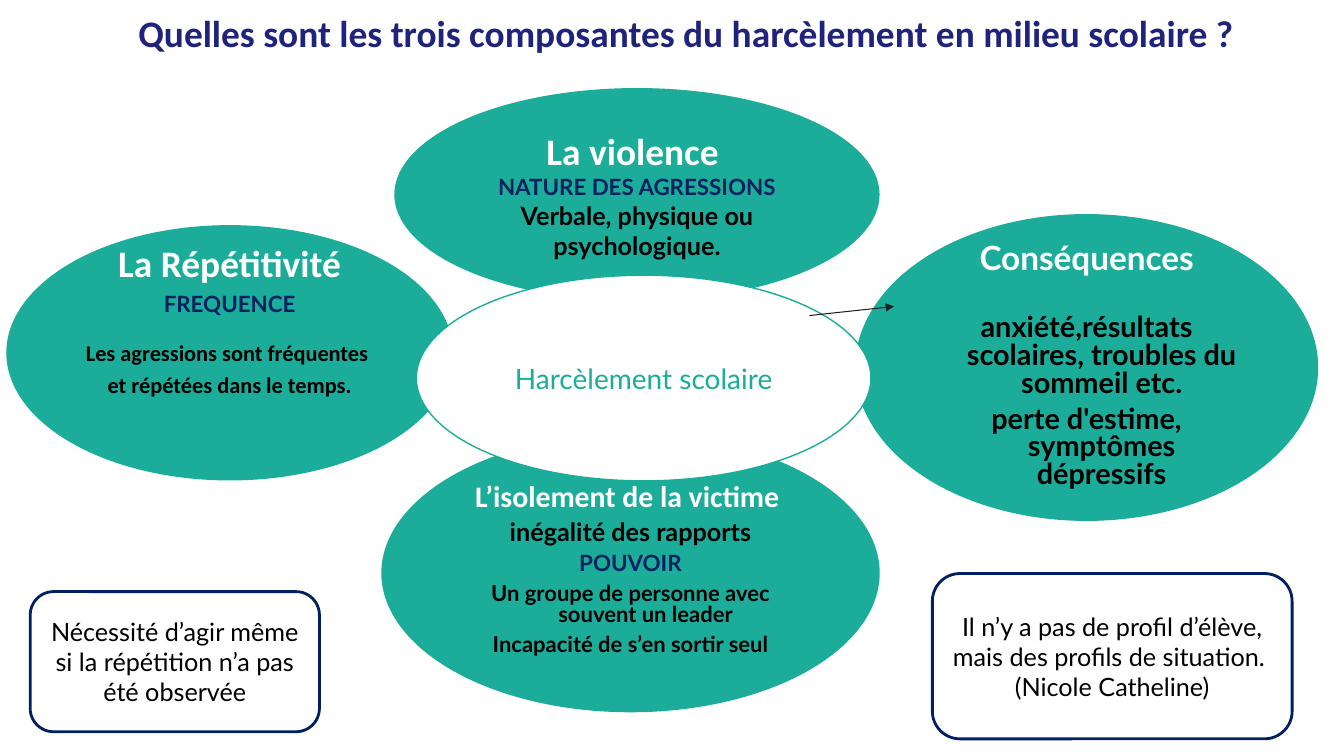
from dataclasses import dataclass

from lxml import etree
from pptx import Presentation
from pptx.dml.color import RGBColor
from pptx.enum.shapes import MSO_CONNECTOR, MSO_SHAPE
from pptx.enum.text import MSO_ANCHOR, MSO_AUTO_SIZE, PP_ALIGN
from pptx.oxml.ns import qn
from pptx.util import Pt

ELLIPSE = MSO_SHAPE.OVAL
ROUNDED = MSO_SHAPE.ROUNDED_RECTANGLE
STRAIGHT = MSO_CONNECTOR.STRAIGHT
MIDDLE = MSO_ANCHOR.MIDDLE
CENTER = PP_ALIGN.CENTER


@dataclass(frozen=True)
class Theme:
    teal: str = "1BAD99"
    navy: str = "002060"
    title: str = "20237B"
    white: str = "FFFFFF"
    black: str = "000000"
    arrow: str = "202020"
    heading_font: str = "Calibri"
    text_font: str = "Lato"
    heading: float = 26.7
    consequence_heading: float = 23.8
    isolation_heading: float = 21.3
    consequence: float = 20.6
    center: float = 20
    text: float = 18
    keyword: float = 16
    detail: float = 15.7


THEME = Theme()
HEAD, TEXT = THEME.heading_font, THEME.text_font

TITLE = "Quelles sont les trois composantes du harcèlement en milieu scolaire ?"
TITLE_BOX = (85.7, -10, 810, 70.6)

# Paragraphs: (text, font, size, colour, bold, hanging indent, space before).
# "lift" is added to the bottom inset and raises the centred text.
BUBBLES = [
    {"box": (282.2, 63.4, 345.6, 151.2), "spacing": 1, "lift": 0, "paragraphs": [
        ("La violence ", HEAD, THEME.heading, THEME.white, True, 0, 0),
        ("NATURE DES AGRESSIONS", TEXT, THEME.keyword, THEME.navy, True, 0, 0),
        ("Verbale, physique ou psychologique.", TEXT, THEME.text, THEME.black, True, 0, 0),
    ]},
    {"box": (5, 161.3, 318.2, 181.4), "spacing": 0.7, "lift": 39.6, "paragraphs": [
        ("La Répétitivité", HEAD, THEME.heading, THEME.white, True, 18, 0),
        ("FREQUENCE", TEXT, THEME.keyword, THEME.navy, True, 18, 10),
        ("Les agressions sont fréquentes ", HEAD, THEME.keyword, THEME.black, True, 18, 21),
        ("et répétées dans le temps.", HEAD, THEME.keyword, THEME.black, True, 18, 10),
    ]},
    {"box": (611.3, 153.4, 329.8, 218.2), "spacing": 0.8, "lift": 0, "paragraphs": [
        ("Conséquences", TEXT, THEME.consequence_heading, THEME.white, True, 21.6, 0),
        ("anxiété,résultats scolaires, troubles du sommeil etc.",
         TEXT, THEME.consequence, THEME.black, True, 21.6, 27.6),
        ("perte d'estime, symptômes dépressifs",
         TEXT, THEME.consequence, THEME.black, True, 21.6, 6),
    ]},
    {"box": (272.9, 310.3, 355, 198), "spacing": 0.8, "lift": 3.3, "paragraphs": [
        ("L’isolement de la victime ",
         HEAD, THEME.isolation_heading, THEME.white, True, 0, 0),
        ("inégalité des rapports", TEXT, THEME.text, THEME.black, True, 21.6, 6),
        ("POUVOIR", TEXT, THEME.keyword, THEME.navy, True, 21.6, 6),
        ("Un groupe de personne avec souvent un leader",
         TEXT, THEME.detail, THEME.black, True, 21.6, 6),
        ("Incapacité de s’en sortir seul", TEXT, THEME.detail, THEME.black, True, 21.6, 6),
    ]},
]
CENTER_BOX = (297.4, 196.6, 324.7, 146.9)
CENTER_TEXT = ["Harcèlement scolaire"]
NOTES = [
    ((666, 409.7, 257, 118.1),
     ["Il n’y a pas de profil d’élève, mais des profils de situation. ",
      "(Nicole Catheline)"]),
    ((21.6, 422.6, 206.6, 100.1),
     ["Nécessité d’agir même si la répétition n’a pas été observée"]),
]
ARROW = (578.2, 225.4, 638.6, 218.9)


def points(values):
    return [Pt(value) for value in values]


def write_text(shape, paragraphs, spacing=1, lift=0):
    frame = shape.text_frame
    frame.word_wrap = True
    frame.auto_size = MSO_AUTO_SIZE.NONE
    frame.vertical_anchor = MIDDLE
    frame.margin_left = frame.margin_right = Pt(7.2)
    frame.margin_top = Pt(3.6)
    frame.margin_bottom = Pt(3.6 + lift)
    for index, (text, font, size, color, bold, indent, before) in enumerate(paragraphs):
        paragraph = frame.add_paragraph() if index else frame.paragraphs[0]
        paragraph.alignment = CENTER
        paragraph.line_spacing = spacing
        paragraph.space_before = Pt(before)
        if indent:
            properties = paragraph._p.get_or_add_pPr()
            properties.set("marL", str(Pt(indent)))
            properties.set("indent", str(Pt(-indent)))
        run = paragraph.add_run()
        run.text = text
        run.font.name = font
        run.font.size = Pt(size)
        run.font.bold = bold
        run.font.color.rgb = RGBColor.from_string(color)


def add_panel(slide, kind, box, fill, line, width):
    shape = slide.shapes.add_shape(kind, *points(box))
    shape.shadow.inherit = False
    shape.fill.solid()
    shape.fill.fore_color.rgb = RGBColor.from_string(fill)
    shape.line.color.rgb = RGBColor.from_string(line)
    shape.line.width = Pt(width)
    return shape


def plain(texts, size, color):
    return [(text, TEXT, size, color, False, 0, 0) for text in texts]


def add_arrow(slide):
    arrow = slide.shapes.add_connector(STRAIGHT, *points(ARROW))
    arrow.line.color.rgb = RGBColor.from_string(THEME.arrow)
    arrow.line.width = Pt(0.75)
    etree.SubElement(arrow.line._get_or_add_ln(), qn("a:tailEnd"), type="triangle")
    etree.SubElement(arrow._element.spPr, qn("a:effectLst"))


def main():
    presentation = Presentation()
    presentation.slide_width, presentation.slide_height = Pt(960), Pt(540)
    slide = presentation.slides.add_slide(presentation.slide_layouts[5])

    title = slide.shapes.title
    title.left, title.top, title.width, title.height = points(TITLE_BOX)
    write_text(title, [(TITLE, HEAD, THEME.heading, THEME.title, True, 0, 0)], 0.9)

    for bubble in BUBBLES:
        shape = add_panel(slide, ELLIPSE, bubble["box"], THEME.teal, THEME.teal, 1)
        write_text(shape, bubble["paragraphs"], bubble["spacing"], bubble["lift"])

    center = add_panel(slide, ELLIPSE, CENTER_BOX, THEME.white, THEME.teal, 1)
    write_text(center, plain(CENTER_TEXT, THEME.center, THEME.teal))

    for box, texts in NOTES:
        note = add_panel(slide, ROUNDED, box, THEME.white, THEME.navy, 2)
        write_text(note, plain(texts, THEME.text, THEME.black))

    add_arrow(slide)
    presentation.save("out.pptx")


if __name__ == "__main__":
    main()
